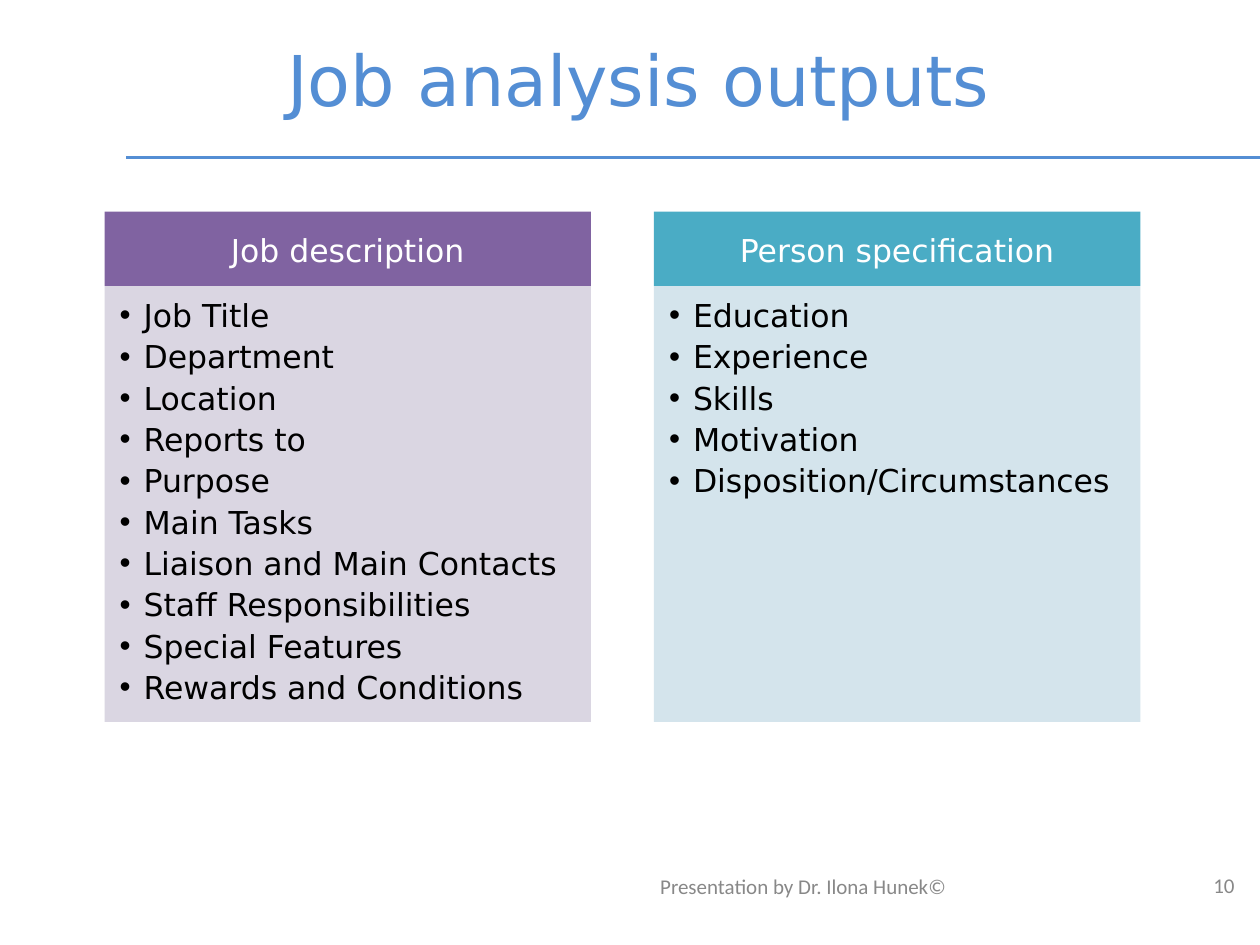
from lxml.etree import SubElement
from pptx import Presentation
from pptx.dml.color import RGBColor
from pptx.enum.shapes import MSO_CONNECTOR
from pptx.enum.text import MSO_ANCHOR, MSO_AUTO_SIZE, PP_ALIGN
from pptx.oxml.ns import qn
from pptx.util import Inches, Pt

SANS, BLUE, GREY = "DejaVu Sans", "548ED4", "888888"


def color(hexa):
    return RGBColor.from_string(hexa)


def place(shape, box):
    shape.left, shape.top, shape.width, shape.height = map(Inches, box)


def paint(shape, hexa, alpha=100):
    shape.fill.solid()
    shape.fill.fore_color.rgb = color(hexa)
    if alpha < 100:
        tint = shape.fill._xPr.find(".//" + qn("a:srgbClr"))
        SubElement(tint, qn("a:alpha"), val=str(alpha * 1000))


def setup(shape, top=0, wrap=True):
    frame = shape.text_frame
    frame.word_wrap = wrap
    frame.auto_size = MSO_AUTO_SIZE.NONE
    frame.vertical_anchor = MSO_ANCHOR.TOP
    frame.margin_left = frame.margin_right = frame.margin_bottom = 0
    frame.margin_top = Inches(top)
    return frame


def write(para, text, size, hexa, face=SANS, align=PP_ALIGN.LEFT):
    para.alignment = align
    run = para.add_run()
    run.text = text
    font = run.font
    font.name, font.size, font.bold = face, Pt(size), False
    font.color.rgb = color(hexa)


def bullet(para):
    props = para._p.get_or_add_pPr()
    props.set("marL", str(Inches(0.31)))
    props.set("indent", str(Inches(-0.19)))
    SubElement(props, qn("a:buFont"), typeface="Arial")
    SubElement(props, qn("a:buChar"), char="•")


def heading(slide, box, text):
    # Title and the rule below it
    title = slide.shapes.title
    place(title, box)
    para = setup(title, 0.05, False).paragraphs[0]
    write(para, text, 40, BLUE)
    rule = slide.shapes.add_connector(
        MSO_CONNECTOR.STRAIGHT, Inches(1), Inches(1.25), Inches(10), Inches(1.25))
    rule.line.color.rgb = color(BLUE)
    rule.line.width = Pt(2)
    SubElement(rule._element.spPr, qn("a:effectLst"))


def column(head, body, box, name, items, dark, light):
    left, top, width, height = box
    band = 0.59
    # Coloured header
    place(head, (left, top, width, band))
    paint(head, dark)
    para = setup(head, 0.15).paragraphs[0]
    para.space_before = Pt(0)
    write(para, name, 18, "FFFFFF", align=PP_ALIGN.CENTER)
    # Bulleted list
    place(body, (left, top + band, width, height - band))
    paint(body, light, 90)
    frame = setup(body, 0.08)
    for i, item in enumerate(items):
        para = frame.add_paragraph() if i else frame.paragraphs[0]
        para.space_before = Pt(2 if i else 0)
        bullet(para)
        write(para, item, 18, "000000")


def note(slide, box, text):
    shape = slide.shapes.add_textbox(*map(Inches, box))
    para = setup(shape).paragraphs[0]
    para.line_spacing = Pt(12.4)
    write(para, text, 12, GREY, "Calibri")


def main():
    deck = Presentation()
    deck.slide_width, deck.slide_height = Inches(10), Inches(7.5)
    slide = deck.slides.add_slide(deck.slide_layouts[4])
    heading(slide, (2.28, 0.24, 5.7, 0.69), "Job analysis outputs")

    # Two columns
    columns = [
        ("Job description",
         ["Job Title", "Department", "Location", "Reports to", "Purpose",
          "Main Tasks", "Liaison and Main Contacts", "Staff Responsibilities",
          "Special Features", "Rewards and Conditions"],
         "8063A1", "D7D2DF"),
        ("Person specification",
         ["Education", "Experience", "Skills", "Motivation",
          "Disposition/Circumstances"],
         "4AACC5", "D0E2EA"),
    ]
    parts = {p.placeholder_format.idx: p for p in slide.placeholders}
    for i, data in enumerate(columns):
        box = (0.83 + i * 4.36, 1.68, 3.86, 4.05)
        column(parts[2 * i + 1], parts[2 * i + 2], box, *data)

    # Page number and footer
    note(slide, (9.63, 6.95, 0.23, 0.19), "10")
    note(slide, (5.24, 6.96, 2.3, 0.19), "Presentation by Dr. Ilona Hunek©")
    deck.save("out.pptx")


if __name__ == "__main__":
    main()
